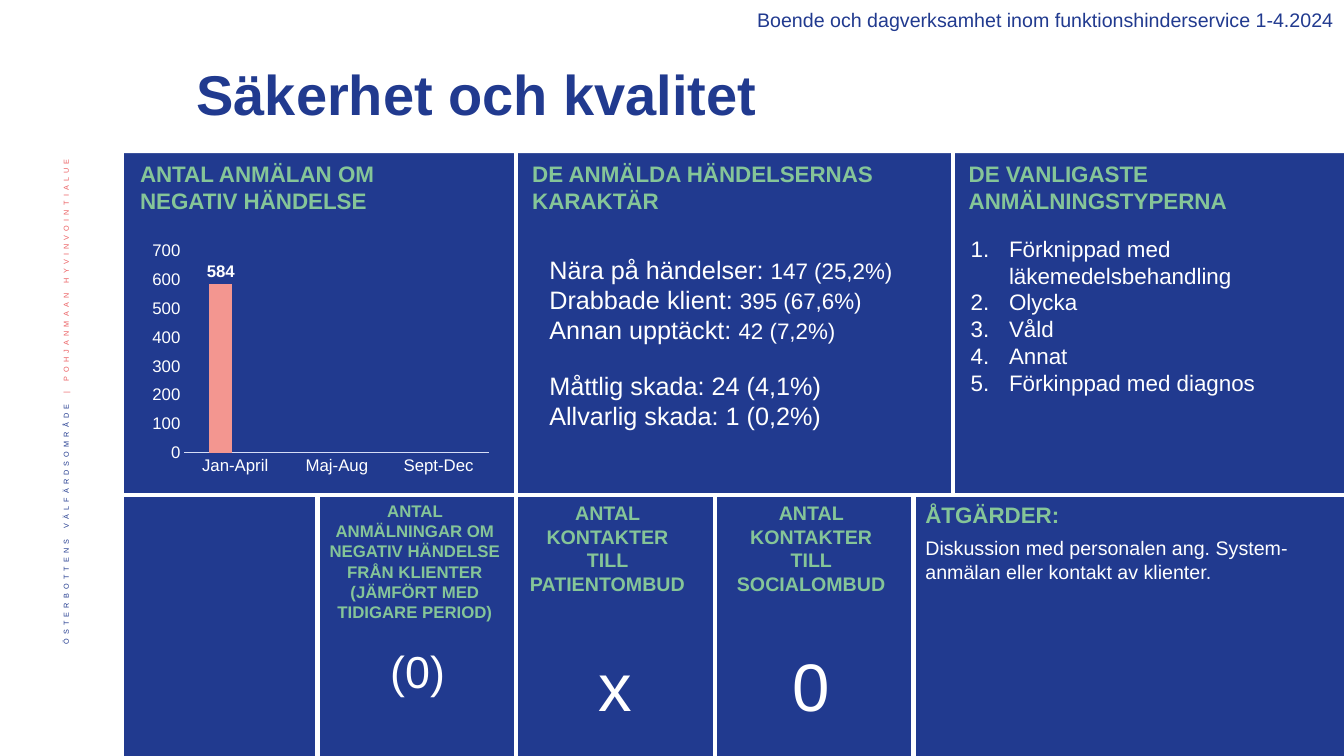
from lxml import etree
from pptx import Presentation
from pptx.chart.data import CategoryChartData
from pptx.dml.color import RGBColor
from pptx.enum.chart import XL_CHART_TYPE as ChartType
from pptx.enum.chart import XL_LABEL_POSITION as LabelPos
from pptx.enum.chart import XL_TICK_MARK as TickMark
from pptx.enum.shapes import MSO_CONNECTOR as Connector
from pptx.enum.shapes import MSO_SHAPE as Shape
from pptx.enum.text import MSO_ANCHOR as Anchor
from pptx.enum.text import PP_ALIGN as Align
from pptx.oxml import parse_xml
from pptx.oxml.ns import nsdecls, qn
from pptx.util import Inches, Pt

NAVY = RGBColor(0x21, 0x3A, 0x8F)
GREEN = RGBColor(0x85, 0xC5, 0x98)
CORAL = RGBColor(0xEB, 0x5C, 0x5F)
SALMON = RGBColor(0xF3, 0x96, 0x90)
PALE_BLUE = RGBColor(0xD6, 0xDD, 0xF6)
WHITE = RGBColor(0xFF, 0xFF, 0xFF)
FONT = "Arial"

ROW_Y = 4.91
LOWER_X = [3.15 + 1.97 * i for i in range(4)]


def set_font(font, size, color, bold=False):
    font.name = FONT
    font.size = Pt(size)
    font.bold = bold
    font.color.rgb = color


def add_panel(slide, box, color):
    panel = slide.shapes.add_shape(Shape.RECTANGLE, *map(Inches, box))
    panel.shadow.inherit = False
    panel.fill.solid()
    panel.fill.fore_color.rgb = color
    panel.line.fill.background()


def add_divider(slide, x1, y1, x2, y2):
    divider = slide.shapes.add_connector(
        Connector.STRAIGHT, *map(Inches, (x1, y1, x2, y2)))
    divider.line.color.rgb = WHITE
    divider.line.width = Pt(3)
    etree.SubElement(divider._element.spPr, qn("a:effectLst"))


def add_frame(slide, box, anchor=Anchor.TOP):
    frame = slide.shapes.add_textbox(*map(Inches, box)).text_frame
    frame.word_wrap = True
    frame.vertical_anchor = anchor
    return frame


def next_paragraph(frame, index):
    return frame.add_paragraph() if index else frame.paragraphs[0]


def add_text(slide, box, text, size, color, bold=False, align=Align.LEFT,
             anchor=Anchor.TOP):
    paragraph = add_frame(slide, box, anchor).paragraphs[0]
    paragraph.text = text
    paragraph.alignment = align
    set_font(paragraph.font, size, color, bold)
    return paragraph


def add_numbered_list(slide, box, items, size):
    frame = add_frame(slide, box)
    for index, item in enumerate(items):
        paragraph = next_paragraph(frame, index)
        paragraph.text = item
        props = paragraph._p.get_or_add_pPr()
        props.set("marL", str(Inches(0.38)))
        props.set("indent", str(-Inches(0.38)))
        etree.SubElement(props, qn("a:buFont"), typeface="+mj-lt")
        etree.SubElement(props, qn("a:buAutoNum"), type="arabicPeriod")
        set_font(paragraph.font, size, WHITE)


def add_event_summary(slide, box, rows):
    frame = add_frame(slide, box)
    for index, (label, value, gap) in enumerate(rows):
        paragraph = next_paragraph(frame, index)
        paragraph.space_before = Pt(gap)
        for text, size in ((label, 18), (value, 16)):
            if text:
                run = paragraph.add_run()
                run.text = text
                set_font(run.font, size, WHITE)


def add_side_label(slide, box, parts):
    frame = add_frame(slide, box, Anchor.MIDDLE)
    frame._txBody.bodyPr.set("vert", "vert270")
    paragraph = frame.paragraphs[0]
    paragraph.alignment = Align.RIGHT
    paragraph.line_spacing = 0.9
    for text, color in parts:
        run = paragraph.add_run()
        run.text = text
        set_font(run.font, 9, color)
        props = run._r.get_or_add_rPr()
        props.set("baseline", "30000")
        props.set("spc", "300")


def style_axis(axis):
    axis.has_major_gridlines = False
    axis.major_tick_mark = axis.minor_tick_mark = TickMark.NONE
    set_font(axis.tick_labels.font, 12, WHITE)


def add_report_chart(slide, box):
    data = CategoryChartData()
    data.categories = ["Jan-April", "Maj-Aug", "Sept-Dec"]
    data.add_series("Series 1", [584, None, None])
    data.add_series("Series 2", [None, None, None])
    chart = slide.shapes.add_chart(
        ChartType.COLUMN_CLUSTERED, *map(Inches, box), data).chart
    chart.has_legend = False
    chart.has_title = False
    set_font(chart.font, 10, NAVY)

    # Axes
    style_axis(chart.category_axis)
    chart.category_axis.format.line.color.rgb = PALE_BLUE
    chart.category_axis.format.line.width = Pt(0.75)
    counts = chart.value_axis
    style_axis(counts)
    counts.format.line.fill.background()
    counts.minimum_scale, counts.maximum_scale = 0, 700
    counts.major_unit = 100

    # Columns and their labels
    plot = chart.plots[0]
    plot.vary_by_categories = False
    plot.gap_width, plot.overlap = 219, -27
    for series, color, bold in zip(plot.series, (SALMON, CORAL), (True, False)):
        series.format.fill.solid()
        series.format.fill.fore_color.rgb = color
        labels = series.data_labels
        labels.show_value = True
        labels.position = LabelPos.OUTSIDE_END
        set_font(labels.font, 12, WHITE, bold)

    # Inner plot area
    area = chart._chartSpace.chart.plotArea
    for old in area.findall(qn("c:layout")):
        area.remove(old)
    sizes = "".join(f'<c:{key} val="{value}"/>' for key, value in (
        ("layoutTarget", "inner"), ("xMode", "edge"), ("yMode", "edge"),
        ("x", 0.138), ("y", 0.091), ("w", 0.82), ("h", 0.788)))
    area.insert(0, parse_xml(
        f'<c:layout {nsdecls("c")}><c:manualLayout>{sizes}'
        '</c:manualLayout></c:layout>'))


def main():
    prs = Presentation()
    prs.slide_width, prs.slide_height = Inches(13.33), Inches(7.5)
    slide = prs.slides.add_slide(prs.slide_layouts[6])

    # Background panels and side label
    add_side_label(slide, (0.42, 1.42, 0.52, 5.73), [
        ("ÖSTERBOTTENS VÄLFÄRDSOMRÅDE ", NAVY),
        ("| POHJANMAAN HYVINVOINTIALUE ", CORAL)])
    add_panel(slide, (1.23, 0, 12.11, 7.5), NAVY)
    add_panel(slide, (1.15, -0.01, 12.26, 1.53), WHITE)

    # Grid lines
    add_divider(slide, 1.23, ROW_Y, 13.34, ROW_Y)
    for x in LOWER_X:
        add_divider(slide, x, ROW_Y, x, 7.59)
    for x in (5.12, 9.45):
        add_divider(slide, x, 1.42, x, ROW_Y)

    # Title and period
    title = add_text(slide, (1.85, 0.47, 9.98, 0.99), "Säkerhet och kvalitet",
                     40, NAVY, True, anchor=Anchor.MIDDLE)
    title.line_spacing = 0.9
    add_text(slide, (6.62, 0.03, 6.71, 0.34),
             "Boende och dagverksamhet inom funktionshinderservice 1-4.2024",
             14, NAVY, align=Align.RIGHT)

    # Upper row
    for x, width, heading in (
            (1.29, 3.11, "ANTAL ANMÄLAN OM NEGATIV HÄNDELSE"),
            (5.18, 4.18, "DE ANMÄLDA HÄNDELSERNAS KARAKTÄR"),
            (9.51, 3.57, "DE VANLIGASTE ANMÄLNINGSTYPERNA")):
        add_text(slide, (x, 1.54, width, 0.64), heading, 16, GREEN, True)
    add_report_chart(slide, (1.32, 2.26, 3.69, 2.54))
    add_event_summary(slide, (5.35, 2.47, 4.02, 2.19), [
        ("Nära på händelser: ", "147 (25,2%)", 0),
        ("Drabbade klient: ", "395 (67,6%)", 0),
        ("Annan upptäckt: ", "42 (7,2%)", 0),
        ("Måttlig skada: 24 (4,1%)", "", 18.4),
        ("Allvarlig skada: 1 (0,2%)", "", 0)])
    add_numbered_list(slide, (9.53, 2.28, 3.8, 2.02), [
        "Förknippad med läkemedelsbehandling", "Olycka", "Våld", "Annat",
        "Förkinppad med diagnos"], 16)

    # Lower row: key figures
    for x, width, heading, size, figure_x, figure, figure_size in (
            (3.13, 1.97, "ANTAL ANMÄLNINGAR OM NEGATIV HÄNDELSE FRÅN KLIENTER "
             "(JÄMFÖRT MED TIDIGARE PERIOD)", 12, 3.16, "(0)", 32),
            (5.13, 1.79, "ANTAL KONTAKTER TILL PATIENTOMBUD", 14, 5.12, "x", 48),
            (7.15, 1.79, "ANTAL KONTAKTER TILL SOCIALOMBUD", 14, 7.06, "0", 48)):
        add_text(slide, (x, 4.92, width, 1.04), heading, size, GREEN, True,
                 Align.CENTER)
        add_text(slide, (figure_x, 6.34, 1.97, 0.91), figure, figure_size,
                 WHITE, align=Align.CENTER)

    # Lower row: actions
    add_text(slide, (9.08, 4.92, 4.03, 0.37), "ÅTGÄRDER:", 16, GREEN, True)
    add_text(slide, (9.08, 5.27, 4.25, 0.81),
             "Diskussion med personalen ang. System-anmälan eller kontakt av "
             "klienter.", 14, WHITE)

    prs.save("out.pptx")


if __name__ == "__main__":
    main()
